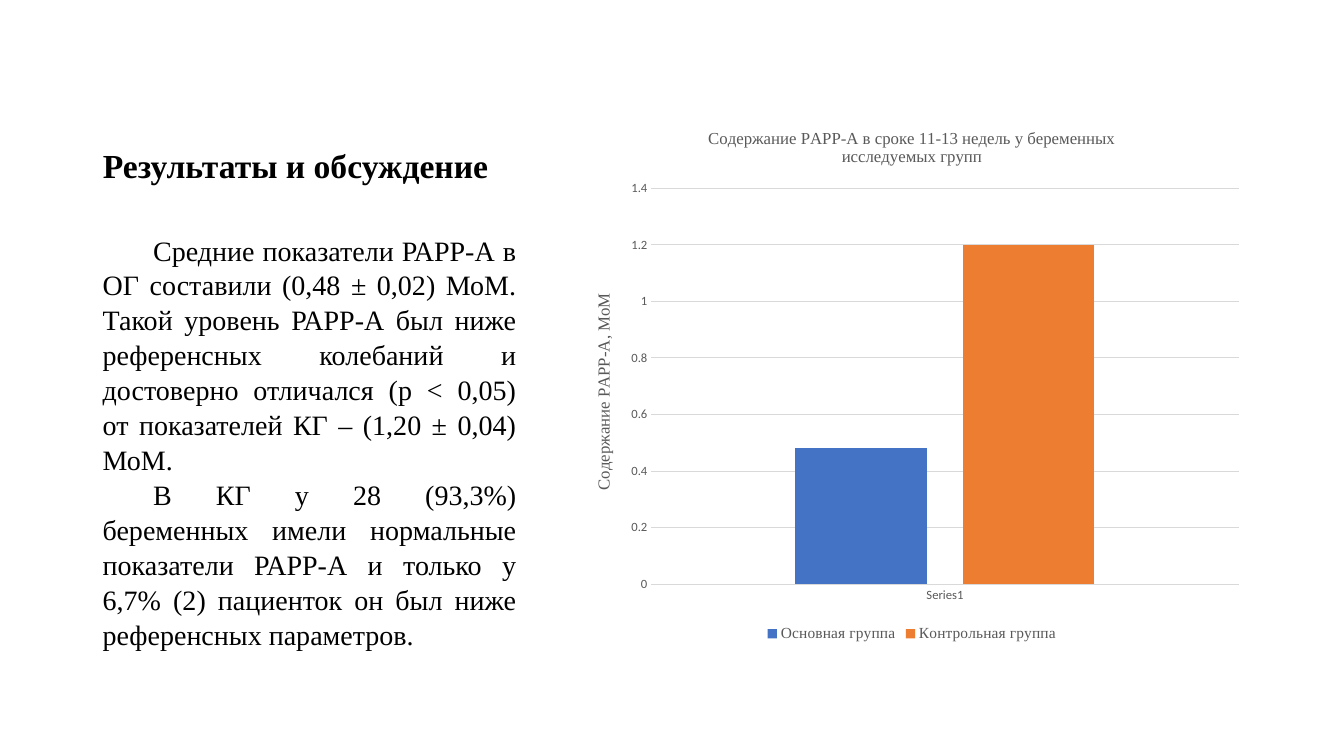
from dataclasses import dataclass

from lxml import etree
from pptx import Presentation
from pptx.chart.data import CategoryChartData
from pptx.dml.color import RGBColor
from pptx.enum.chart import XL_CHART_TYPE, XL_LEGEND_POSITION, XL_TICK_MARK
from pptx.enum.text import MSO_ANCHOR, PP_ALIGN
from pptx.util import Inches, Pt


@dataclass(frozen=True)
class Theme:
    serif: str = "Times New Roman"
    sans: str = "Calibri"
    text: str = "000000"
    muted: str = "595959"
    grid: str = "D9D9D9"
    series: tuple = ("4472C4", "ED7D31")
    title: int = 24
    body: int = 20
    caption: int = 12
    legend: int = 11
    chart: int = 10
    axis: int = 9


def format_font(font, name, size, color, bold=False):
    font.name = name
    font.size = Pt(size)
    font.bold = bold
    font.color.rgb = RGBColor.from_string(color)


def add_text(p, text, **style):
    r = p.add_run()
    r.text = text
    format_font(r.font, **style)


def format_line(line, color):
    line.color.rgb = RGBColor.from_string(color)
    line.width = Pt(0.75)


class SlideBuilder:
    def __init__(self, prs, theme):
        self.theme = theme
        self.s = prs.slides.add_slide(prs.slide_layouts[5])

    def title(self, text, x, y, w, h):
        sp = self.s.shapes.title
        sp.left, sp.top, sp.width, sp.height = map(Inches, (x, y, w, h))
        tf = sp.text_frame
        tf.word_wrap = True
        tf.vertical_anchor = MSO_ANCHOR.MIDDLE
        p = tf.paragraphs[0]
        p.alignment = PP_ALIGN.LEFT
        p.line_spacing = 0.9
        t = self.theme
        add_text(p, text, name=t.serif, size=t.title, color=t.text, bold=True)

    def body(self, paragraphs, x, y, w, h):
        tf = self.s.shapes.add_textbox(*map(Inches, (x, y, w, h))).text_frame
        tf.word_wrap = True
        t = self.theme
        for i, text in enumerate(paragraphs):
            p = tf.add_paragraph() if i else tf.paragraphs[0]
            p.alignment = PP_ALIGN.JUSTIFY
            p.line_spacing = 1.04
            p._p.get_or_add_pPr().set("indent", str(Inches(0.5)))
            add_text(p, text, name=t.serif, size=t.body, color=t.text)

    def caption(self, tf, lines):
        t = self.theme
        for i, text in enumerate(lines):
            p = tf.add_paragraph() if i else tf.paragraphs[0]
            add_text(p, text, name=t.serif, size=t.caption, color=t.muted)

    def column_chart(self, title, axis_title, category, values, x, y, w, h):
        t = self.theme
        data = CategoryChartData()
        data.categories = [category]
        for name, value in values.items():
            data.add_series(name, [value])
        chart = self.s.shapes.add_chart(
            XL_CHART_TYPE.COLUMN_CLUSTERED, *map(Inches, (x, y, w, h)), data).chart
        format_font(chart.font, t.sans, t.chart, t.text)
        chart.has_title = True
        self.caption(chart.chart_title.text_frame, title)
        chart.chart_title.include_in_layout = False

        chart.has_legend = True
        chart.legend.position = XL_LEGEND_POSITION.BOTTOM
        chart.legend.include_in_layout = False
        format_font(chart.legend.font, t.serif, t.legend, t.muted)

        plot = chart.plots[0]
        plot.vary_by_categories = False
        plot.gap_width, plot.overlap = 219, -27
        for series, color in zip(plot.series, t.series):
            series.format.fill.solid()
            series.format.fill.fore_color.rgb = RGBColor.from_string(color)
            series.invert_if_negative = False

        for axis in (chart.category_axis, chart.value_axis):
            axis.major_tick_mark = axis.minor_tick_mark = XL_TICK_MARK.NONE
            format_font(axis.tick_labels.font, t.sans, t.axis, t.muted)
        format_line(chart.category_axis.format.line, t.grid)
        axis = chart.value_axis
        axis.minimum_scale, axis.maximum_scale, axis.major_unit = 0, 1.4, 0.2
        axis.format.line.fill.background()
        format_line(axis.major_gridlines.format.line, t.grid)
        axis.has_title = True
        self.caption(axis.axis_title.text_frame, [axis_title])
        self.place_plot(chart, x=0.117, y=0.148, w=0.863, h=0.737)

    def place_plot(self, chart, **fractions):
        """Fix the inner plot area as fractions of the chart frame."""
        area = chart._chartSpace.chart.plotArea
        ns = area.nsmap["c"]
        for old in area.findall(f"{{{ns}}}layout"):
            area.remove(old)
        layout = etree.Element(f"{{{ns}}}layout")
        manual = etree.SubElement(layout, f"{{{ns}}}manualLayout")
        settings = {"layoutTarget": "inner", "xMode": "edge", "yMode": "edge"}
        for tag, value in {**settings, **fractions}.items():
            etree.SubElement(manual, f"{{{ns}}}{tag}").set("val", str(value))
        area.insert(0, layout)


def main():
    prs = Presentation()
    prs.slide_width, prs.slide_height = Inches(13.33), Inches(7.5)
    slide = SlideBuilder(prs, Theme())
    slide.title("Результаты и обсуждение", 0.92, 1.08, 4.3, 1.17)
    slide.body([
        "Средние показатели РАРР-А в ОГ составили (0,48 ± 0,02) МоМ. "
        "Такой уровень РАРР-А был ниже референсных колебаний и достоверно "
        "отличался (р ˂ 0,05) от показателей КГ – (1,20 ± 0,04) МоМ.",
        "В КГ у 28 (93,3%) беременных имели нормальные показатели РАРР-А "
        "и только у 6,7% (2) пациенток он был ниже референсных параметров.",
    ], 0.92, 2.25, 4.3, 4.17)
    slide.column_chart(
        ["Содержание РАРР-А в сроке 11-13 недель у беременных", "исследуемых групп"],
        "Содержание РАРР-А, МоМ", "Series1",
        {"Основная группа": 0.48, "Контрольная группа": 1.2},
        5.67, 1.08, 6.75, 5.33)
    prs.save("out.pptx")


if __name__ == "__main__":
    main()
